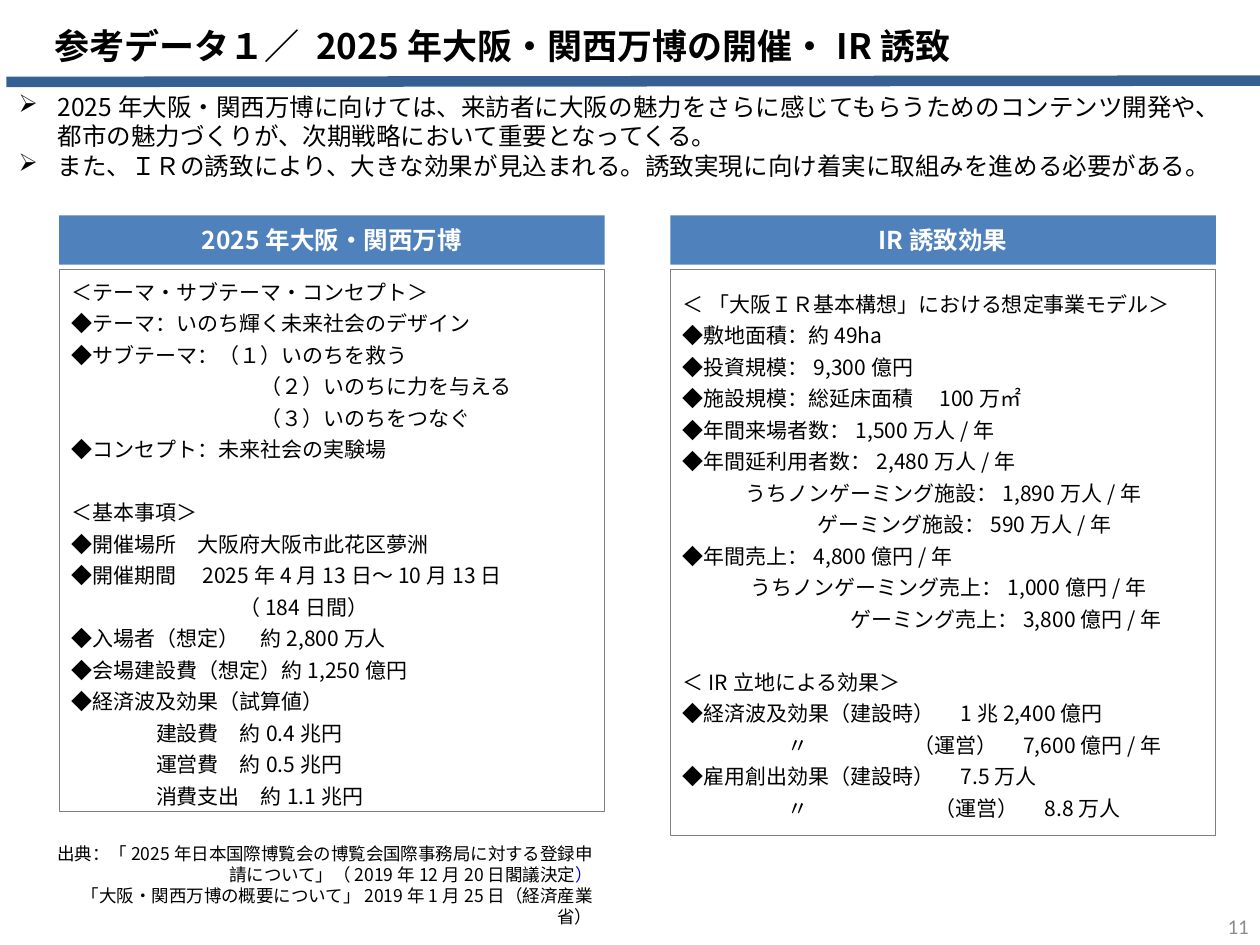
"""Build the reference-data slide on the 2025 Expo and the IR bid."""
from lxml import etree
from pptx import Presentation
from pptx import util as u
from pptx.dml import color
from pptx.enum import shapes, text
from pptx.oxml import ns

NOTO, LATIN = "Noto Sans CJK JP", "Calibri"
BLACK, WHITE, BLUE, GREY = "000000", "FFFFFF", "4F81BD", "808080"
BAR, PAREN, PAGE = "376092", "0000FF", "8C8C8C"

TITLE = [("参考データ１／ ", LATIN), ("2025年大阪・関西万博の開催・IR誘致", NOTO)]
MESSAGES = [
    "2025年大阪・関西万博に向けては、来訪者に大阪の魅力をさらに感じてもらうためのコンテンツ開発や、"
    "都市の魅力づくりが、次期戦略において重要となってくる。",
    "また、ＩＲの誘致により、大きな効果が見込まれる。誘致実現に向け着実に取組みを進める必要がある。",
]
EXPO = [
    ("＜テーマ・サブテーマ・コンセプト＞", 0),
    ("◆テーマ：いのち輝く未来社会のデザイン", 0),
    ("◆サブテーマ：（１）いのちを救う", 0),
    ("（２）いのちに力を与える", 1.5),
    ("（３）いのちをつなぐ", 1.5),
    ("◆コンセプト：未来社会の実験場", 0),
    ("＜基本事項＞", 0),
    ("◆開催場所　大阪府大阪市此花区夢洲", 0),
    ("◆開催期間　2025年4月13日～10月13日", 0),
    ("（184日間）", 1.33),
    ("◆入場者（想定）　約2,800万人", 0),
    ("◆会場建設費（想定）約1,250億円", 0),
    ("◆経済波及効果（試算値）", 0),
    ("建設費　約0.4兆円", 0.67),
    ("運営費　約0.5兆円", 0.67),
    ("消費支出　約1.1兆円", 0.67),
]
IR = [
    ("＜ 「大阪ＩＲ基本構想」における想定事業モデル＞", 0),
    ("◆敷地面積：約49ha", 0),
    ("◆投資規模：9,300億円", 0),
    ("◆施設規模：総延床面積　100万㎡", 0),
    ("◆年間来場者数：1,500万人/年", 0),
    ("◆年間延利用者数：2,480万人/年", 0),
    ("うちノンゲーミング施設：1,890万人/年", 0.5),
    ("ゲーミング施設：590万人/年", 1.07),
    ("◆年間売上：4,800億円/年", 0),
    ("うちノンゲーミング売上：1,000億円/年", 0.54),
    ("ゲーミング売上：3,800億円/年", 1.33),
    ("＜IR立地による効果＞", 0),
    ("◆経済波及効果（建設時）　1兆2,400億円", 0),
    ("\t〃\t（運営）　7,600億円/年", 0, (0.83, 1.83)),
    ("◆雇用創出効果（建設時）　7.5万人", 0),
    ("\t〃\t（運営）　8.8万人", 0, (0.83, 2)),
]
PANELS = [
    ("2025年大阪・関西万博", EXPO, 0.47, 4.3),
    ("IR誘致効果", IR, 5.32, 4.49),
]
SOURCES = [
    [("出典：「2025年日本国際博覧会の博覧会国際事務局に対する登録申請について」"
      "（2019年12月20日閣議決定", BLACK), ("）", PAREN)],
    [("「大阪・関西万博の概要について」2019年1月25日（経済産業省）", BLACK)],
]


def rgb(value):
    """Turn a hex string into a colour."""
    return color.RGBColor.from_string(value)


def child(parent, tag, **attributes):
    """Append a drawing element with its attributes."""
    return etree.SubElement(parent, ns.qn(tag), attributes)


def add_run(paragraph, words, size, ink=BLACK, bold=False, face=NOTO):
    """Add one formatted run to a paragraph."""
    run = paragraph.add_run()
    run.text = words
    run.font.size, run.font.bold, run.font.name = u.Pt(size), bold, face
    run.font.color.rgb = rgb(ink)
    child(run.font._element, "a:ea", typeface=NOTO)


def paragraphs(frame, items):
    """Pair each item with its own paragraph in the frame."""
    for index, item in enumerate(items):
        yield (frame.add_paragraph() if index else frame.paragraphs[0]), item


def add_box(slide, place, kind=shapes.MSO_SHAPE.RECTANGLE, fill=None, line=None):
    """Add a left-aligned box and return it."""
    box = slide.shapes.add_shape(kind, *map(u.Inches, place))
    box.shadow.inherit = False
    if fill:
        box.fill.solid()
        box.fill.fore_color.rgb = rgb(fill)
    else:
        box.fill.background()
    if line:
        box.line.color.rgb, box.line.width = rgb(line), u.Pt(0.75)
    else:
        box.line.fill.background()
    box.text_frame.word_wrap = True
    box.text_frame.vertical_anchor = text.MSO_ANCHOR.MIDDLE
    box.text_frame.paragraphs[0].alignment = text.PP_ALIGN.LEFT
    return box


def add_text(slide, place):
    """Add a wrapping text box and return its frame."""
    frame = slide.shapes.add_textbox(*map(u.Inches, place)).text_frame
    frame.word_wrap = True
    return frame


def add_heading(slide):
    """Add the title, the bar under it and the two messages."""
    title = add_box(slide, (0.05, 0.19, 9.21, 0.68), shapes.MSO_SHAPE.ROUNDED_RECTANGLE)
    title.adjustments[0] = 0.01
    frame = title.text_frame
    frame.vertical_anchor, frame.margin_top = text.MSO_ANCHOR.TOP, 0
    frame.margin_left = u.Inches(0.38)
    for words, face in TITLE:
        add_run(frame.paragraphs[0], words, 20, bold=True, face=face)

    bar = slide.shapes.add_connector(
        shapes.MSO_CONNECTOR.STRAIGHT, *map(u.Inches, (0.05, 0.65, 10.01, 0.64)))
    bar.line.color.rgb, bar.line.width = rgb(BAR), u.Pt(6)
    child(bar._element.spPr, "a:effectLst")

    messages = add_text(slide, (0.05, 0.68, 9.6, 0.81))
    for paragraph, words in paragraphs(messages, MESSAGES):
        indent = u.Inches(0.31)
        properties = paragraph._p.get_or_add_pPr()
        properties.set("marL", str(indent))
        properties.set("indent", str(-indent))
        child(properties, "a:buChar", char="➢")
        add_run(paragraph, words, 14)


def add_panel(slide, heading, facts, left, height):
    """Add a blue heading with its framed list of facts."""
    header = add_box(slide, (left, 1.71, 4.33, 0.39), fill=BLUE)
    label = header.text_frame.paragraphs[0]
    label.alignment = text.PP_ALIGN.CENTER
    add_run(label, heading, 14, WHITE, True)

    body = add_box(slide, (left, 2.14, 4.33, height), fill=WHITE, line=GREY)
    for paragraph, (words, indent, *tabs) in paragraphs(body.text_frame, facts):
        paragraph.alignment = text.PP_ALIGN.LEFT
        paragraph.line_spacing = u.Pt(18)
        if words.startswith("＜") and (words, indent) != facts[0]:
            paragraph.space_before = u.Pt(18)
        properties = paragraph._p.get_or_add_pPr()
        properties.set("marL", str(u.Inches(indent)))
        if tabs:
            stops = child(properties, "a:tabLst")
            for stop in tabs[0]:
                child(stops, "a:tab", pos=str(u.Inches(stop)), algn="l")
        add_run(paragraph, words, 12)


def add_footer(slide):
    """Add the sources and the page number."""
    sources = add_text(slide, (0.28, 6.64, 4.52, 0.61))
    for paragraph, runs in paragraphs(sources, SOURCES):
        paragraph.alignment = text.PP_ALIGN.RIGHT
        for words, ink in runs:
            add_run(paragraph, words, 10, ink)

    page = add_text(slide, (7.68, 7.15, 2.33, 0.4))
    page.vertical_anchor = text.MSO_ANCHOR.MIDDLE
    page.paragraphs[0].alignment = text.PP_ALIGN.RIGHT
    add_run(page.paragraphs[0], "11", 12, PAGE, face=LATIN)


def main():
    """Assemble and save the slide."""
    deck = Presentation()
    deck.slide_width, deck.slide_height = u.Inches(10), u.Inches(7.5)
    slide = deck.slides.add_slide(deck.slide_layouts[6])
    add_heading(slide)
    for panel in PANELS:
        add_panel(slide, *panel)
    add_footer(slide)
    deck.save("out.pptx")


if __name__ == "__main__":
    main()
